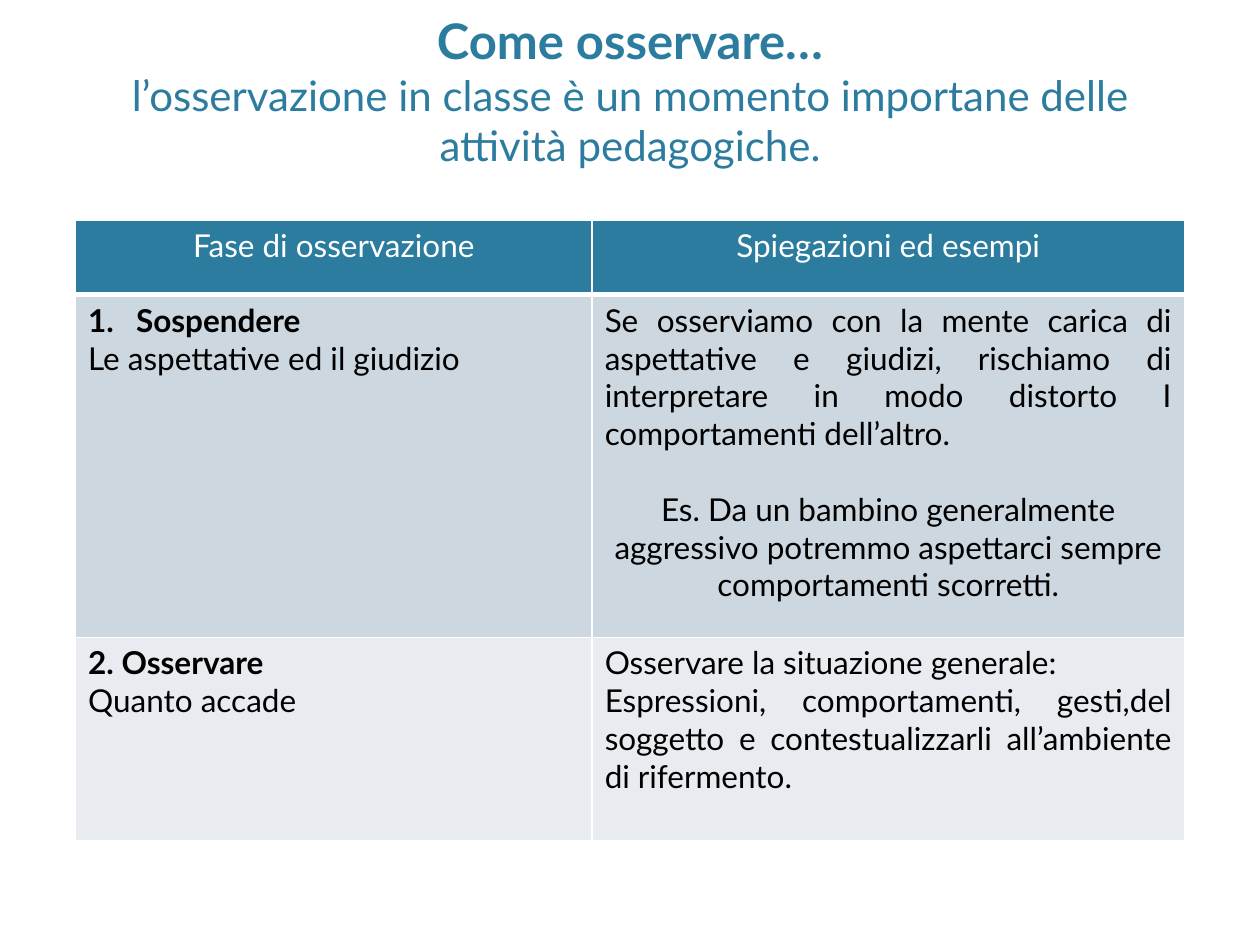
from lxml.etree import SubElement
from pptx import Presentation
from pptx.dml.color import RGBColor
from pptx.enum.text import MSO_ANCHOR, PP_ALIGN
from pptx.oxml import parse_xml
from pptx.oxml.ns import nsdecls, qn
from pptx.util import Inches, Pt

TEAL = RGBColor(0x2C, 0x7C, 0x9F)
WHITE = RGBColor(0xFF, 0xFF, 0xFF)
BLACK = RGBColor(0x00, 0x00, 0x00)
BAND_DARK = RGBColor(0xCD, 0xD7, 0xDF)
BAND_LIGHT = RGBColor(0xE8, 0xEC, 0xF0)

WIDTH, HEIGHT = Inches(10), Inches(7.5)
MARGIN = 0.06
COLS = (4.1, 4.7)
ROWS = (0.59, 2.72, 1.61)
FILLS = (TEAL, BAND_DARK, BAND_LIGHT)
LINE_GAP = Pt(21.6)

LEFT, CENTER, JUSTIFY = PP_ALIGN.LEFT, PP_ALIGN.CENTER, PP_ALIGN.JUSTIFY
BODY = {"name": "Lato", "size": Pt(18), "bold": False}
STRONG = {**BODY, "bold": True}
TITLE = {**STRONG, "size": Pt(28)}
SUBTITLE = {**BODY, "size": Pt(24)}

CELLS = (
    (
        [("Fase di osservazione", BODY, {"alignment": CENTER})],
        [("Spiegazioni ed esempi", BODY, {"alignment": CENTER})],
    ),
    (
        [
            ("Sospendere", STRONG, {"alignment": LEFT}),
            ("Le aspettative ed il giudizio", BODY, {"alignment": LEFT}),
        ],
        [
            ("Se osserviamo con la mente carica di aspettative e giudizi, "
             "rischiamo di interpretare in modo distorto I comportamenti "
             "dell’altro.", BODY, {"alignment": JUSTIFY}),
            ("Es. Da un bambino generalmente aggressivo potremmo aspettarci "
             "sempre comportamenti scorretti.", BODY,
             {"alignment": CENTER, "space_before": LINE_GAP}),
        ],
    ),
    (
        [
            ("2. Osservare", STRONG, {"alignment": LEFT}),
            ("Quanto accade", BODY, {"alignment": LEFT}),
        ],
        [
            ("Osservare la situazione generale:", BODY, {"alignment": JUSTIFY}),
            ("Espressioni, comportamenti, gesti,del soggetto e "
             "contestualizzarli all’ambiente di rifermento.", BODY,
             {"alignment": JUSTIFY}),
        ],
    ),
)


def apply(target, values):
    """Set each attribute of the target from a dict of values."""
    for name, value in values.items():
        setattr(target, name, value)


def add_run(p, text, font, color):
    """Append a formatted run to a paragraph."""
    r = p.add_run()
    r.text = text
    apply(r.font, font)
    r.font.color.rgb = color


def add_title(s):
    """Add the heading and its subtitle, resting on the bottom of the box."""
    sp = s.shapes.add_textbox(int(WIDTH * MARGIN), Inches(0.18),
                              int(WIDTH * (1 - 2 * MARGIN)), Inches(1.22))
    tf = sp.text_frame
    apply(tf, {"word_wrap": True, "vertical_anchor": MSO_ANCHOR.BOTTOM})
    p = tf.paragraphs[0]
    p.alignment = CENTER
    add_run(p, "Come osservare…", TITLE, TEAL)
    p.add_line_break()
    add_run(p, "l’osservazione in classe è un momento importane delle "
               "attività pedagogiche.", SUBTITLE, TEAL)


def set_borders(cell, bottom):
    """Give a cell white borders, with its own bottom width in points."""
    tcPr = cell._tc.get_or_add_tcPr()
    for i, (side, width) in enumerate(zip("LRTB", (1, 1, 1, bottom))):
        tcPr.insert(i, parse_xml(
            f'<a:ln{side} {nsdecls("a")} w="{Pt(width)}"><a:solidFill>'
            f'<a:srgbClr val="{WHITE}"/></a:solidFill></a:ln{side}>'))


def set_number(p):
    """Number a paragraph automatically with a hanging indent."""
    pPr = p._p.get_or_add_pPr()
    indent = Inches(0.38)
    pPr.set("marL", str(indent))
    pPr.set("indent", str(-indent))
    SubElement(pPr, qn("a:buFont"), typeface="+mj-lt")
    SubElement(pPr, qn("a:buAutoNum"), type="arabicPeriod")


def fill_cell(cell, paragraphs, fill, color):
    """Fill a cell with colour and formatted paragraphs."""
    cell.fill.solid()
    cell.fill.fore_color.rgb = fill
    tf = cell.text_frame
    for i, (text, font, layout) in enumerate(paragraphs):
        p = tf.add_paragraph() if i else tf.paragraphs[0]
        apply(p, layout)
        add_run(p, text, font, color)


def add_phase_table(s):
    """Add the table of observation phases."""
    table = s.shapes.add_table(
        len(ROWS), len(COLS), int(WIDTH * MARGIN), Inches(1.75),
        Inches(sum(COLS)), Inches(sum(ROWS))).table
    for column, width in zip(table.columns, COLS):
        column.width = Inches(width)
    for i, (row, height) in enumerate(zip(table.rows, ROWS)):
        row.height = Inches(height)
        for cell, paragraphs in zip(row.cells, CELLS[i]):
            fill_cell(cell, paragraphs, FILLS[i], BLACK if i else WHITE)
            set_borders(cell, 1 if i else 3)
    set_number(table.cell(1, 0).text_frame.paragraphs[0])


def main():
    """Build the slide and save it."""
    prs = Presentation()
    apply(prs, {"slide_width": WIDTH, "slide_height": HEIGHT})
    s = prs.slides.add_slide(prs.slide_layouts[6])
    add_title(s)
    add_phase_table(s)
    prs.save("out.pptx")


if __name__ == "__main__":
    main()
